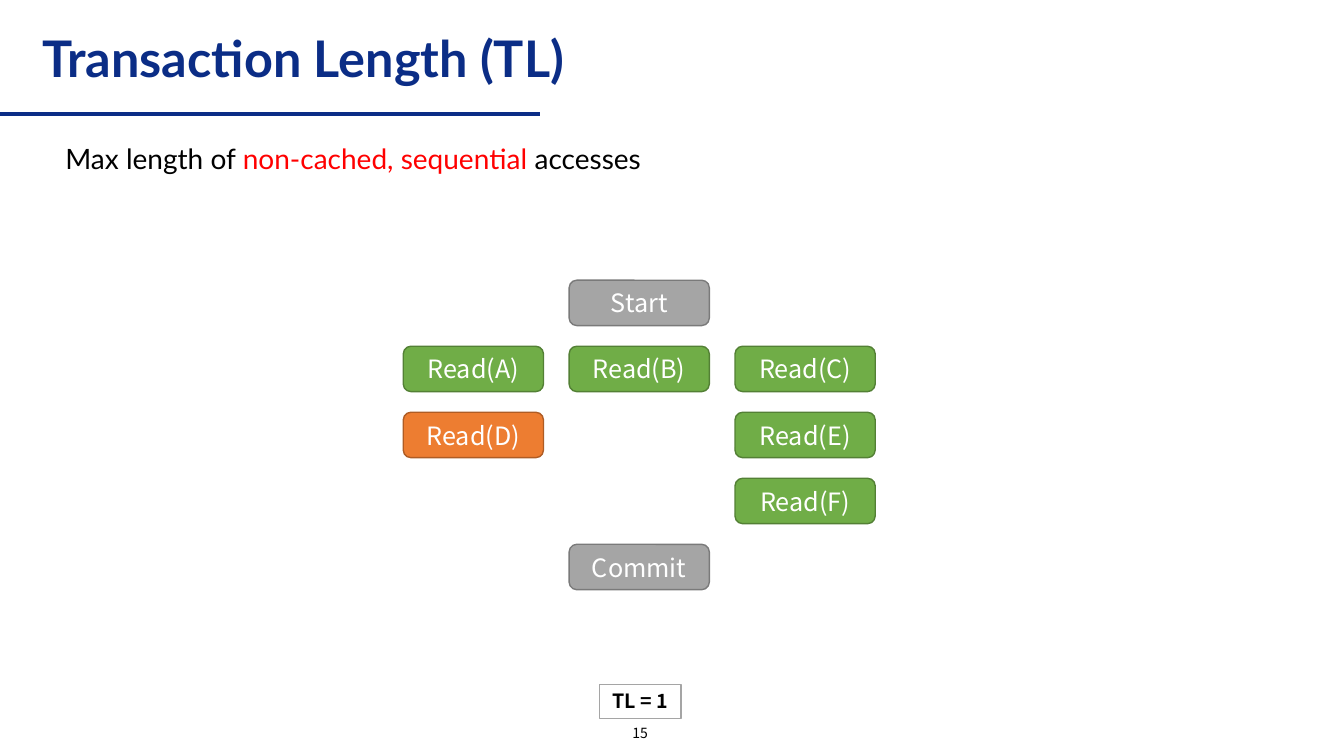
from lxml import etree
from pptx import Presentation, util as u
from pptx.dml.color import RGBColor
from pptx.enum import shapes, text
from pptx.oxml.ns import qn

SLIDE_W, SLIDE_H = 13.33, 7.5
HEAD_FONT, NODE_FONT = "Lato", "Noto Sans CJK KR"
NAVY, BLACK, WHITE, RED = "0B2D86", "000000", "FFFFFF", "FF0000"
GREY, GREEN, ORANGE = ("A5A5A5", "7A7A7A"), ("70AD47", "538035"), ("ED7D31", "AF5C24")

# Label, column, row, (fill, outline)
OPERATIONS = [
    ("Start", 1, 0, GREY),
    ("Read(A)", 0, 1, GREEN),
    ("Read(B)", 1, 1, GREEN),
    ("Read(C)", 2, 1, GREEN),
    ("Read(D)", 0, 2, ORANGE),
    ("Read(E)", 2, 2, GREEN),
    ("Read(F)", 2, 3, GREEN),
    ("Commit", 1, 4, GREY),
]


def colour(value):
    return RGBColor.from_string(value)


def inches(*lengths):
    return [u.Inches(length) for length in lengths]


def write(frame, runs, font, size, align=text.PP_ALIGN.LEFT,
          anchor=text.MSO_ANCHOR.MIDDLE, bold=False, wrap=True):
    """Fill a frame with one paragraph made of (words, colour) runs."""
    frame.word_wrap = wrap
    frame.vertical_anchor = anchor
    paragraph = frame.paragraphs[0]
    paragraph.alignment = align
    paragraph.font.name = font
    paragraph.font.size = u.Pt(size)
    paragraph.font.bold = bold
    for words, shade in runs:
        run = paragraph.add_run()
        run.text = words
        run.font.color.rgb = colour(shade)
    return paragraph


def add_label(slide, box, runs, font, size, **style):
    label = slide.shapes.add_textbox(*inches(*box))
    return write(label.text_frame, runs, font, size, **style)


def add_node(slide, preset, box, fill, outline):
    node = slide.shapes.add_shape(preset, *inches(*box))
    node.shadow.inherit = False
    node.fill.solid()
    node.fill.fore_color.rgb = colour(fill)
    node.line.color.rgb = colour(outline)
    node.line.width = u.Pt(1)
    return node.text_frame


def add_header(slide, left, top, width, height):
    """Title above a rule that starts at the slide's edge."""
    rule_y = top + height + 0.15
    rule = slide.shapes.add_connector(
        shapes.MSO_CONNECTOR.STRAIGHT, *inches(0, rule_y, 5.36, rule_y))
    rule.line.color.rgb = colour(NAVY)
    rule.line.width = u.Pt(3)
    etree.SubElement(rule.line._get_or_add_ln().getparent(), qn("a:effectLst"))
    title = add_label(slide, (left, top, width, height),
                      [("Transaction Length (TL)", NAVY)], HEAD_FONT, 36, bold=True)
    title.line_spacing = 0.9


def add_definition(slide, box):
    runs = [("Max length of ", BLACK), ("non-cached, sequential ", RED), ("accesses", BLACK)]
    add_label(slide, box, runs, HEAD_FONT, 20, anchor=text.MSO_ANCHOR.TOP)


def add_operations(slide, left, top, width, height):
    """Operations on a grid of three columns and five rows."""
    node_w, node_h = 1.39, 0.45
    column_step = (width - node_w) / 2
    row_step = (height - node_h) / 4
    for name, column, row, (fill, outline) in OPERATIONS:
        box = (left + column * column_step, top + row * row_step, node_w, node_h)
        frame = add_node(slide, shapes.MSO_SHAPE.ROUNDED_RECTANGLE, box, fill, outline)
        write(frame, [(name, WHITE)], NODE_FONT, 18, align=text.PP_ALIGN.CENTER)


def add_footer(slide, left, top, width, height):
    """Resulting length in a frame, with the page number below it."""
    result_w, result_h, number_h = 0.81, 0.34, 0.32
    result_box = (left + (width - result_w) / 2, top, result_w, result_h)
    result = add_node(slide, shapes.MSO_SHAPE.RECTANGLE, result_box, WHITE, GREY[0])
    write(result, [("TL = 1", BLACK)], NODE_FONT, 14, align=text.PP_ALIGN.CENTER,
          anchor=text.MSO_ANCHOR.TOP, bold=True, wrap=False)
    result.auto_size = text.MSO_AUTO_SIZE.SHAPE_TO_FIT_TEXT
    add_label(slide, (left, top + height - number_h, width, number_h),
              [("15", BLACK)], NODE_FONT, 10, align=text.PP_ALIGN.CENTER)


def main():
    deck = Presentation()
    deck.slide_width, deck.slide_height = inches(SLIDE_W, SLIDE_H)
    slide = deck.slides.add_slide(deck.slide_layouts[6])
    add_header(slide, 0.32, 0.24, 9.17, 0.74)
    add_definition(slide, (0.55, 1.35, 12.14, 0.45))
    add_operations(slide, 4, 2.78, 4.68, 3.07)
    add_footer(slide, 4.85, 6.79, 3, 0.64)
    deck.save("out.pptx")


if __name__ == "__main__":
    main()
